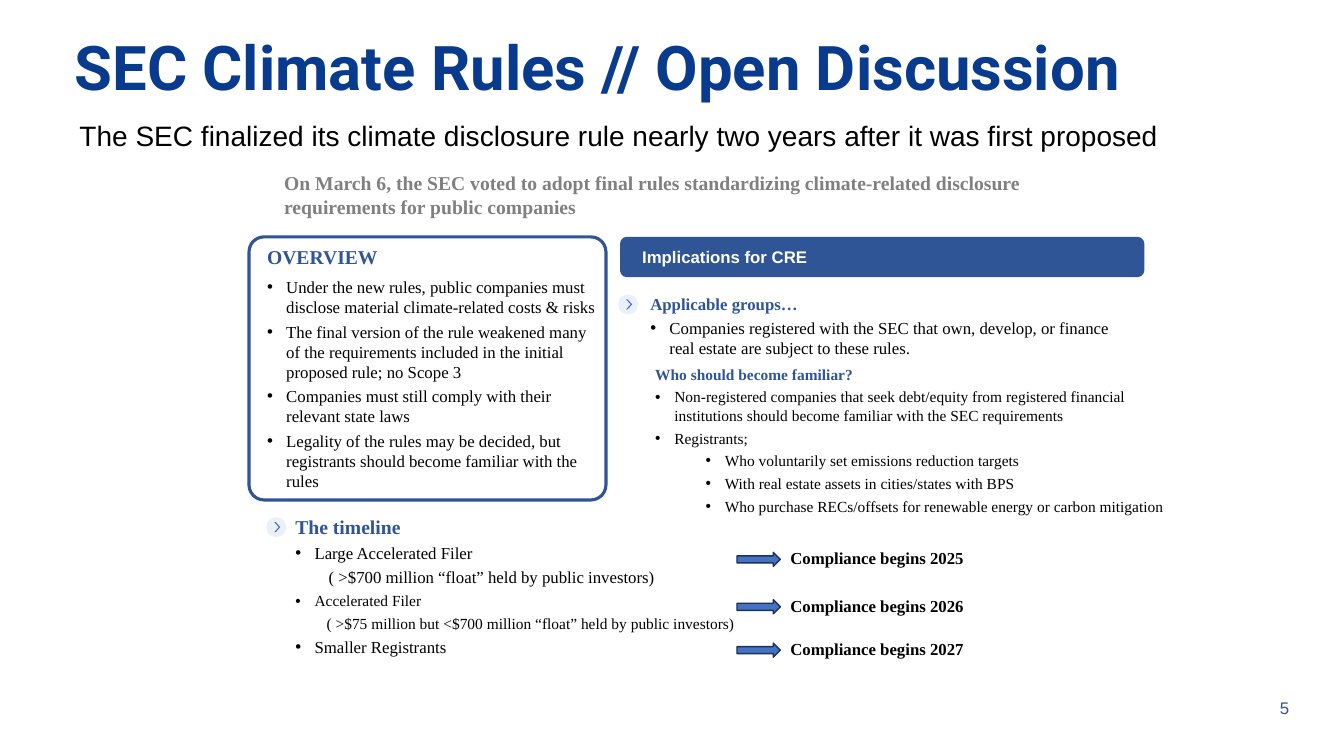
from lxml.etree import SubElement
from pptx import Presentation
from pptx.dml.color import RGBColor
from pptx.enum.shapes import MSO_SHAPE
from pptx.enum.text import MSO_ANCHOR, PP_ALIGN
from pptx.oxml.ns import qn
from pptx.util import Inches, Pt

TITLE_BLUE = RGBColor(0x08, 0x3A, 0x8D)
HEADING_BLUE = RGBColor(0x2F, 0x55, 0x97)
ACCENT_BLUE = RGBColor(0x44, 0x72, 0xC4)
ARROW_EDGE = RGBColor(0x1E, 0x32, 0x56)
PALE_BLUE = RGBColor(0xEC, 0xF1, 0xF9)
GRAY = RGBColor(0x80, 0x80, 0x80)
BLACK = RGBColor(0, 0, 0)
WHITE = RGBColor(0xFF, 0xFF, 0xFF)
SERIF = "Times New Roman"

presentation = Presentation()
presentation.slide_width = Inches(13.33)
presentation.slide_height = Inches(7.5)
slide = presentation.slides.add_slide(presentation.slide_layouts[6])


def write(frame, text, size=12, font=SERIF, color=BLACK, bold=False, after=0,
          align=PP_ALIGN.LEFT, spacing=None, indent=0, bullet=False, level=0):
    """Fill the frame's empty first paragraph, or add one below the others."""
    paragraph = frame.paragraphs[0] if not frame.text else frame.add_paragraph()
    paragraph.alignment = align
    paragraph.level = level
    paragraph.space_after = Pt(after)
    if spacing:
        paragraph.line_spacing = spacing
    properties = paragraph._p.get_or_add_pPr()
    properties.set("marL", str(Inches(indent)))
    properties.set("indent", str(Inches(-0.19 if bullet else 0)))
    if bullet:
        SubElement(properties, qn("a:buFont"), typeface="Arial")
        SubElement(properties, qn("a:buChar"), char="•")
    run = paragraph.add_run()
    run.text = text
    run.font.size = Pt(size)
    run.font.name = font
    run.font.bold = bold
    run.font.color.rgb = color


def add_part(left, top, width, height, kind=None, fill=None, line=None,
             weight=1, anchor=MSO_ANCHOR.TOP, inset=(0.1, 0.05)):
    """Add a preset shape, or a wrapping text box when no kind is given."""
    area = [Inches(length) for length in (left, top, width, height)]
    if kind is None:
        part = slide.shapes.add_textbox(*area)
    else:
        part = slide.shapes.add_shape(kind, *area)
        part.shadow.inherit = False
        if fill is None:
            part.fill.background()
        else:
            part.fill.solid()
            part.fill.fore_color.rgb = fill
        if line is None:
            part.line.fill.background()
        else:
            part.line.color.rgb = line
            part.line.width = Pt(weight)
    frame = part.text_frame
    frame.word_wrap = True
    frame.vertical_anchor = anchor
    frame.margin_left = frame.margin_right = Inches(inset[0])
    frame.margin_top = frame.margin_bottom = Inches(inset[1])
    return part


# Title, subtitle, lead sentence and page number
title = add_part(0.69, 0.04, 11.53, 1.32, anchor=MSO_ANCHOR.MIDDLE, inset=(0.05, 0.05))
write(title.text_frame, "SEC Climate Rules // Open Discussion", size=44,
      font="Roboto", color=TITLE_BLUE, bold=True, spacing=0.9)
subtitle = add_part(0.69, 0.97, 11.46, 0.79, anchor=MSO_ANCHOR.MIDDLE)
write(subtitle.text_frame,
      "The SEC finalized its climate disclosure rule nearly two years after it was first proposed",
      size=20, font="Arial", spacing=0.9)
lead = add_part(2.72, 1.65, 8.03, 0.57)
write(lead.text_frame,
      "On March 6, the SEC voted to adopt final rules standardizing climate-related "
      "disclosure requirements for public companies",
      size=14, color=GRAY, bold=True, after=3)
page_number = add_part(12.15, 6.82, 1.18, 0.4, anchor=MSO_ANCHOR.MIDDLE)
write(page_number.text_frame, "5", font="Arial", color=HEADING_BLUE, align=PP_ALIGN.CENTER)

# Overview panel
overview_panel = add_part(2.47, 2.35, 3.54, 2.61, MSO_SHAPE.ROUNDED_RECTANGLE,
                          line=HEADING_BLUE, weight=2.25)
overview_panel.adjustments[0] = 0.057
overview = add_part(2.55, 2.38, 3.49, 2.57).text_frame
write(overview, "OVERVIEW", size=14, color=HEADING_BLUE, bold=True, after=6)
for point in (
    "Under the new rules, public companies must disclose material climate-related costs & risks",
    "The final version of the rule weakened many of the requirements included in the "
    "initial proposed rule; no Scope 3",
    "Companies must still comply with their relevant state laws",
    "Legality of the rules may be decided, but registrants should become familiar with the rules",
):
    write(overview, point, after=3, indent=0.19, bullet=True)

# Implications banner
banner = add_part(6.15, 2.35, 5.2, 0.4, MSO_SHAPE.ROUNDED_RECTANGLE,
                  fill=HEADING_BLUE, anchor=MSO_ANCHOR.MIDDLE)
banner.text_frame.margin_left = Inches(0.2)
write(banner.text_frame, "Implications for CRE", font="Arial", color=WHITE, bold=True)

# Round chevron markers beside the two section headings
for left, top in ((6.13, 2.92), (2.64, 5.13)):
    add_part(left, top, 0.2, 0.2, MSO_SHAPE.OVAL, fill=PALE_BLUE)
    chevron = add_part(left + 0.08, top + 0.05, 0.06, 0.1, MSO_SHAPE.CHEVRON, fill=ACCENT_BLUE)
    chevron.adjustments[0] = 0.75

# Applicable groups
groups = add_part(6.45, 2.91, 4.6, 0.65, inset=(0, 0)).text_frame
write(groups, "Applicable groups…", color=HEADING_BLUE, bold=True, after=3)
write(groups,
      "Companies registered with the SEC that own, develop, or finance real estate "
      "are subject to these rules.",
      after=3, indent=0.19, bullet=True)

# Who should become familiar
familiar = add_part(6.4, 3.57, 5.4, 1.61).text_frame
write(familiar, "Who should become familiar?", size=11, color=HEADING_BLUE, bold=True, after=3)
for level, point in (
    (0, "Non-registered companies that seek debt/equity from registered financial "
        "institutions should become familiar with the SEC requirements"),
    (0, "Registrants;"),
    (1, "Who voluntarily set emissions reduction targets"),
    (1, "With real estate assets in cities/states with BPS"),
    (1, "Who purchase RECs/offsets for renewable energy or carbon mitigation"),
):
    write(familiar, point, size=11, after=3, indent=0.19 + 0.5 * level,
          bullet=True, level=level)

# Timeline of filers
timeline = add_part(2.93, 5.11, 5.03, 1.42, inset=(0, 0)).text_frame
write(timeline, "The timeline", size=14, color=HEADING_BLUE, bold=True, after=3)
for filer, threshold, size in (
    ("Large Accelerated Filer", "( >$700 million “float” held by public investors)", 12),
    ("Accelerated Filer",
     "( >$75 million but ˂$700 million “float” held by public investors)", 11),
    ("Smaller Registrants", None, 12),
):
    write(timeline, filer, size=size, after=3, indent=0.19, bullet=True)
    if threshold:
        write(timeline, threshold, size=size, after=3, indent=0.33 if size == 12 else 0.31)

# Compliance dates
for year, arrow_top, label_top in ((2025, 5.48, 5.38), (2026, 5.95, 5.86), (2027, 6.38, 6.29)):
    add_part(7.31, arrow_top, 0.43, 0.14, MSO_SHAPE.RIGHT_ARROW,
             fill=ACCENT_BLUE, line=ARROW_EDGE)
    compliance = add_part(7.74, label_top, 2.38, 0.3)
    write(compliance.text_frame, f"Compliance begins {year}", bold=True)

presentation.save("out.pptx")
